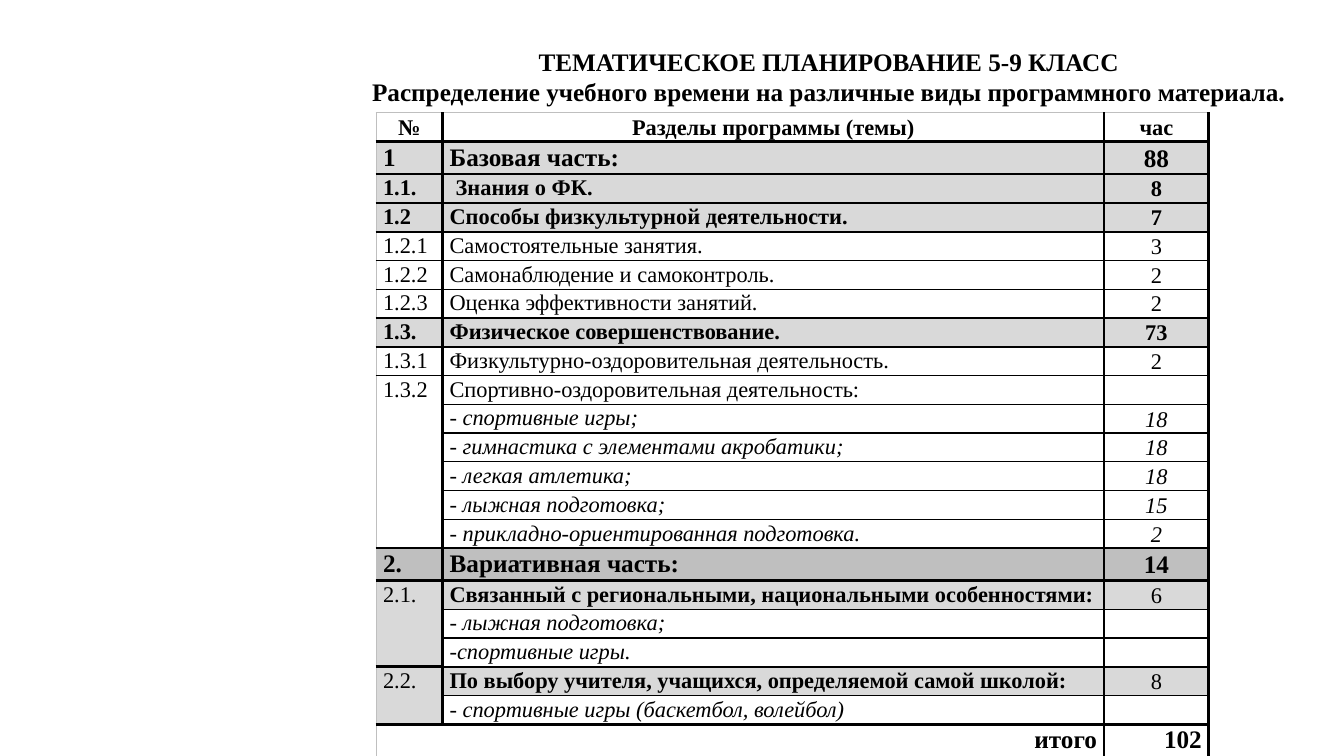
from lxml.etree import SubElement
from pptx import Presentation
from pptx.dml.color import RGBColor
from pptx.enum.text import MSO_ANCHOR, PP_ALIGN
from pptx.oxml.ns import qn
from pptx.util import Inches, Pt

COLORS = {"text": "000000", "line": "000000", "edge": "BFBFBF",
          "white": "FFFFFF", "gray": "D9D9D9", "dark": "BFBFBF"}
FONT = "Times New Roman"
LINE_SPACING = 1.07
COLUMN_WIDTHS = [0.66, 6.56, 1.04]
ROW_HEIGHTS = {16: 0.28, 18: 0.32}
SIDE_MARGIN = 0.07
KNOWLEDGE_ROW = 2
HEAVY, MEDIUM, THIN, EDGE = 2.25, 1.5, 1, 0.75
NO_STYLE = "{2D5ABB26-0587-4C30-8999-92F81FD0307C}"
TITLE = ["ТЕМАТИЧЕСКОЕ ПЛАНИРОВАНИЕ 5-9 КЛАСС",
         "Распределение учебного времени на различные виды программного материала."]

CENTERED = (PP_ALIGN.CENTER,) * 3
LISTED = (PP_ALIGN.LEFT, PP_ALIGN.LEFT, PP_ALIGN.CENTER)
TOTALED = (PP_ALIGN.RIGHT,) * 3
ALL_BOLD, NO_BOLD, TOPIC_BOLD = (True,) * 3, (False,) * 3, (False, True, False)
STYLES = {
    "head": {"size": 16, "fill": "white", "bold": ALL_BOLD, "italic": False, "align": CENTERED},
    "part": {"size": 18, "fill": "gray", "bold": ALL_BOLD, "italic": False, "align": LISTED},
    "extra": {"size": 18, "fill": "dark", "bold": ALL_BOLD, "italic": False, "align": LISTED},
    "section": {"size": 16, "fill": "gray", "bold": ALL_BOLD, "italic": False, "align": LISTED},
    "choice": {"size": 16, "fill": "gray", "bold": TOPIC_BOLD, "italic": False, "align": LISTED},
    "item": {"size": 16, "fill": "white", "bold": NO_BOLD, "italic": False, "align": LISTED},
    "sport": {"size": 16, "fill": "white", "bold": NO_BOLD, "italic": True, "align": LISTED},
    "total": {"size": 18, "fill": "white", "bold": ALL_BOLD, "italic": False, "align": TOTALED},
}
ROWS = [
    ("head", HEAVY, "№", "Разделы программы (темы)", "час"),
    ("part", HEAVY, "1", "Базовая часть:", "88"),
    ("section", MEDIUM, "1.1.", "Знания о ФК.", "8"),
    ("section", MEDIUM, "1.2", "Способы физкультурной деятельности.", "7"),
    ("item", THIN, "1.2.1", "Самостоятельные занятия.", "3"),
    ("item", THIN, "1.2.2", "Самонаблюдение и самоконтроль.", "2"),
    ("item", MEDIUM, "1.2.3", "Оценка эффективности занятий.", "2"),
    ("section", MEDIUM, "1.3.", "Физическое совершенствование.", "73"),
    ("item", THIN, "1.3.1", "Физкультурно-оздоровительная деятельность.", "2"),
    ("item", THIN, "1.3.2", "Спортивно-оздоровительная деятельность:", ""),
    ("sport", THIN, "", "- спортивные игры;", "18"),
    ("sport", THIN, "", "- гимнастика с элементами акробатики;", "18"),
    ("sport", THIN, "", "- легкая атлетика;", "18"),
    ("sport", THIN, "", "- лыжная подготовка;", "15"),
    ("sport", HEAVY, "", "- прикладно-ориентированная подготовка.", "2"),
    ("extra", HEAVY, "2.", "Вариативная часть:", "14"),
    ("choice", THIN, "2.1.", "Связанный с региональными, национальными особенностями:", "6"),
    ("sport", THIN, "", "- лыжная подготовка;", ""),
    ("sport", MEDIUM, "", "-спортивные игры.", ""),
    ("choice", THIN, "2.2.", "По выбору учителя, учащихся, определяемой самой школой:", "8"),
    ("sport", HEAVY, "", "- спортивные игры (баскетбол, волейбол)", ""),
    ("total", THIN, "итого", "", "102"),
]
MERGES = [((9, 0), (14, 0)), ((16, 0), (18, 0)), ((19, 0), (20, 0)), ((21, 0), (21, 1))]


def apply(target, values):
    """Set attributes of an object from a dict."""
    for name, value in values.items():
        setattr(target, name, value)


def write(paragraph, text, size, bold, italic, alignment):
    """Fill a paragraph with one formatted run, or size it when empty."""
    paragraph.alignment = alignment
    if not text:
        SubElement(paragraph._p, qn("a:endParaRPr"), sz=str(size * 100))
        return
    run = paragraph.add_run()
    run.text = text
    apply(run.font, {"name": FONT, "size": Pt(size), "bold": bold, "italic": italic})
    run.font.color.rgb = RGBColor.from_string(COLORS["text"])


def add_title(slide):
    """Add the two centred heading lines."""
    box = slide.shapes.add_textbox(Inches(3.27), Inches(0.41), Inches(9.9), Inches(0.71))
    frame = box.text_frame
    frame.word_wrap = True
    for index, line in enumerate(TITLE):
        paragraph = frame.add_paragraph() if index else frame.paragraphs[0]
        write(paragraph, line, 18, True, False, PP_ALIGN.CENTER)


def add_borders(cell, borders):
    """Draw the sides given as tag to (width, color) ahead of the cell fill."""
    properties = cell._tc.get_or_add_tcPr()
    for position, (side, (width, color)) in enumerate(borders.items()):
        line = SubElement(properties, qn(f"a:{side}"), w=str(Pt(width)))
        fill = SubElement(line, qn("a:solidFill"))
        SubElement(fill, qn("a:srgbClr"), val=COLORS[color])
        properties.insert(position, line)


def cell_borders(row, column):
    """Return the visible borders of a cell, without those inside a merge."""
    borders = {
        "lnL": (HEAVY, "line") if column else (EDGE, "edge"),
        "lnR": (HEAVY, "line"),
        "lnT": (ROWS[row - 1][1], "line") if row else (EDGE, "edge"),
        "lnB": (ROWS[row][1], "line"),
    }
    for (top, left), (bottom, right) in MERGES:
        if top <= row <= bottom and left <= column <= right:
            inner = {"lnL": column > left, "lnR": column < right,
                     "lnT": row > top, "lnB": row < bottom}
            borders = {side: value for side, value in borders.items() if not inner[side]}
    return borders


def format_cell(cell, row, column):
    """Write and style one cell of the plan."""
    kind, _, *texts = ROWS[row]
    style = STYLES[kind]
    middle = kind != "total" and (column == 2 or kind == "head")
    apply(cell, {
        "margin_left": Inches(SIDE_MARGIN), "margin_right": Inches(SIDE_MARGIN),
        "margin_top": 0, "margin_bottom": 0,
        "vertical_anchor": MSO_ANCHOR.MIDDLE if middle else MSO_ANCHOR.TOP,
    })
    if (row, column) == (KNOWLEDGE_ROW, 1):
        cell.margin_left = Inches(0.13)
    cell.fill.solid()
    cell.fill.fore_color.rgb = RGBColor.from_string(COLORS[style["fill"]])
    paragraph = cell.text_frame.paragraphs[0]
    paragraph.line_spacing = LINE_SPACING
    write(paragraph, texts[column], style["size"], style["bold"][column],
          style["italic"], style["align"][column])
    add_borders(cell, cell_borders(row, column))


def add_plan(slide):
    """Add the table of sections and hours."""
    heights = [ROW_HEIGHTS[STYLES[row[0]]["size"]] for row in ROWS]
    frame = slide.shapes.add_table(len(ROWS), len(COLUMN_WIDTHS), Inches(3.73), Inches(1.12),
                                   Inches(sum(COLUMN_WIDTHS)), Inches(sum(heights)))
    table = frame.table
    apply(table, {"first_row": False, "horz_banding": False})
    table._tbl.tblPr.find(qn("a:tableStyleId")).text = NO_STYLE
    for column, width in zip(table.columns, COLUMN_WIDTHS):
        column.width = Inches(width)
    for index, height in enumerate(heights):
        table.rows[index].height = Inches(height)
        for column in range(len(COLUMN_WIDTHS)):
            format_cell(table.cell(index, column), index, column)
    for start, end in MERGES:
        table.cell(*start).merge(table.cell(*end))


def main():
    """Build the planning slide and save it."""
    presentation = Presentation()
    apply(presentation, {"slide_width": Inches(13.33), "slide_height": Inches(7.5)})
    slide = presentation.slides.add_slide(presentation.slide_layouts[6])
    add_title(slide)
    add_plan(slide)
    presentation.save("out.pptx")


if __name__ == "__main__":
    main()
